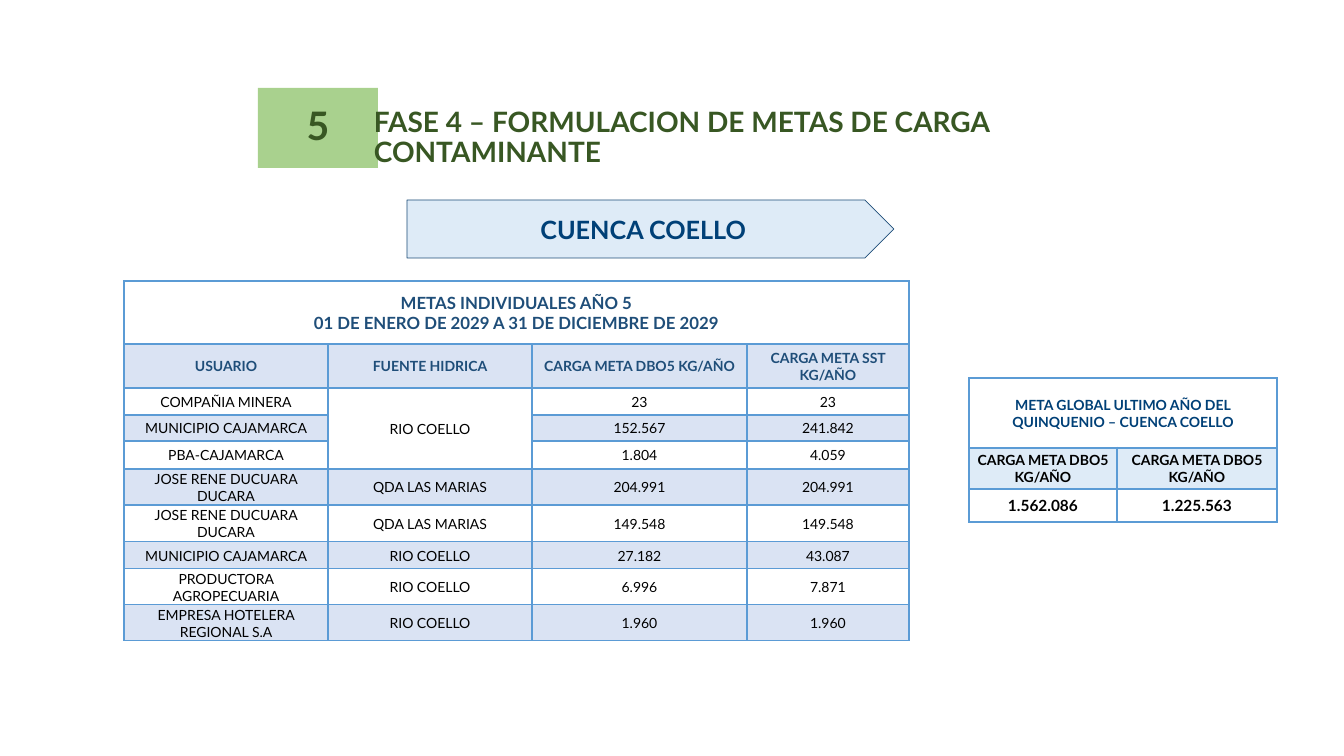
from lxml import etree
from pptx import Presentation
from pptx.dml.color import RGBColor
from pptx.enum.shapes import MSO_SHAPE
from pptx.enum.text import MSO_ANCHOR, MSO_AUTO_SIZE, PP_ALIGN
from pptx.oxml.ns import qn
from pptx.util import Emu, Pt

PENTAGON = MSO_SHAPE.PENTAGON
MIDDLE = MSO_ANCHOR.MIDDLE
NO_AUTOFIT = MSO_AUTO_SIZE.NONE
LEFT, CENTER = PP_ALIGN.LEFT, PP_ALIGN.CENTER

EMU_PER_PX = 914400 / 100.8
FONT = "Lato"
COLORS = {
    "badge": "A9D18E",
    "title": "385723",
    "navy": "004077",
    "heading": "1F4E79",
    "black": "000000",
    "border": "5B9BD5",
    "band": "DAE3F3",
    "pale": "DEEBF7",
}

USER_COLUMNS = ["USUARIO", "FUENTE HIDRICA", "CARGA META DBO5 KG/AÑO", "CARGA META SST KG/AÑO"]
USERS = [
    ["COMPAÑIA MINERA", "RIO COELLO", "23", "23"],
    ["MUNICIPIO CAJAMARCA", "", "152.567", "241.842"],
    ["PBA-CAJAMARCA", "", "1.804", "4.059"],
    ["JOSE RENE DUCUARA DUCARA", "QDA LAS MARIAS", "204.991", "204.991"],
    ["JOSE RENE DUCUARA DUCARA", "QDA LAS MARIAS", "149.548", "149.548"],
    ["MUNICIPIO CAJAMARCA", "RIO COELLO", "27.182", "43.087"],
    ["PRODUCTORA AGROPECUARIA", "RIO COELLO", "6.996", "7.871"],
    ["EMPRESA HOTELERA REGIONAL S.A", "RIO COELLO", "1.960", "1.960"],
]


def px(length):
    return Emu(round(length * EMU_PER_PX))


def rgb(name):
    return RGBColor.from_string(COLORS[name])


def write(frame, lines, size, color, bold=True, align=CENTER, spacing=None):
    """Fill a text frame with one paragraph, its lines parted by line breaks."""
    frame.word_wrap = True
    frame.vertical_anchor = MIDDLE
    para = frame.paragraphs[0]
    para.alignment = align
    para.line_spacing = spacing
    for number, line in enumerate(lines):
        if number:
            para.add_line_break()
        span = para.add_run()
        span.text = line
        span.font.name = FONT
        span.font.size = Pt(size)
        span.font.bold = bold
        span.font.color.rgb = rgb(color)


def add_number_title(page, text, left, top, width, height):
    title = page.shapes.title
    title.left, title.top, title.width, title.height = map(px, (left, top, width, height))
    title.fill.solid()
    title.fill.fore_color.rgb = rgb("badge")
    frame = title.text_frame
    frame.auto_size = NO_AUTOFIT
    frame.margin_left = frame.margin_right = frame.margin_top = frame.margin_bottom = px(10)
    write(frame, [text], 28, "title", spacing=0.9)


def add_heading(page, text, left, top, width, height):
    box = page.shapes.add_textbox(*map(px, (left, top, width, height)))
    write(box.text_frame, [text], 20, "title", align=LEFT, spacing=0.9)


def add_banner(page, text, left, top, width, height):
    banner = page.shapes.add_shape(PENTAGON, *map(px, (left, top, width, height)))
    banner.shadow.inherit = False
    banner.fill.solid()
    banner.fill.fore_color.rgb = rgb("pale")
    banner.line.color.rgb = rgb("heading")
    banner.line.width = Pt(0.5)
    write(banner.text_frame, [text], 18, "navy")


def add_borders(cell, top=1, bottom=1):
    properties = cell._tc.get_or_add_tcPr()
    for side, width in (("L", 1), ("R", 1), ("T", top), ("B", bottom)):
        line = etree.SubElement(properties, qn(f"a:ln{side}"), w=str(Pt(width)))
        fill = etree.SubElement(line, qn("a:solidFill"))
        etree.SubElement(fill, qn("a:srgbClr"), val=COLORS["border"])


def add_grid(page, left, top, widths, heights, head_rule=1):
    """Add a bordered, unfilled table whose first row is one merged heading."""
    place = map(px, (left, top, sum(widths), sum(heights)))
    table = page.shapes.add_table(len(heights), len(widths), *place).table
    table.first_row = table.horz_banding = False
    for column, width in zip(table.columns, widths):
        column.width = px(width)
    for number, (row, height) in enumerate(zip(table.rows, heights)):
        row.height = px(height)
        for cell in row.cells:
            add_borders(cell, head_rule if number == 1 else 1, head_rule if number == 0 else 1)
            cell.fill.background()
            cell.margin_left = cell.margin_right = cell.margin_top = px(1)
            cell.margin_bottom = 0
    table.cell(0, 0).merge(table.cell(0, len(widths) - 1))
    return table


def fill_row(table, number, texts, size, color, bold=True, band=None):
    for column, text in enumerate(texts):
        cell = table.cell(number, column)
        if band:
            cell.fill.solid()
            cell.fill.fore_color.rgb = rgb(band)
        if text:
            write_cell(cell, [text], size, color, bold)


def write_cell(cell, lines, size, color, bold=True):
    write(cell.text_frame, lines, size, color, bold)
    cell.vertical_anchor = MIDDLE


def add_global_goal(page):
    table = add_grid(page, 969, 378, [148, 160], [70, 41, 33], head_rule=2)
    heading = ["META GLOBAL ULTIMO AÑO DEL", "QUINQUENIO – CUENCA COELLO"]
    write_cell(table.cell(0, 0), heading, 10, "navy")
    fill_row(table, 1, ["CARGA META DBO5 KG/AÑO"] * 2, 10, "black", band="pale")
    fill_row(table, 2, ["1.562.086", "1.225.563"], 11, "black")


def add_user_goals(page):
    heights = [63, 44, 27, 26, 28, 36, 37, 27, 36, 36]
    table = add_grid(page, 124, 281, [204, 204, 215, 162], heights)
    heading = ["METAS INDIVIDUALES AÑO 5", "01 DE ENERO DE 2029 A 31 DE DICIEMBRE DE 2029"]
    write_cell(table.cell(0, 0), heading, 12, "heading")
    fill_row(table, 1, USER_COLUMNS, 10, "heading", band="band")
    # The first three users share one water source
    table.cell(2, 1).merge(table.cell(4, 1))
    for number, user in enumerate(USERS, start=2):
        band = "band" if number % 2 else None
        fill_row(table, number, user, 10, "black", bold=False, band=band)


def main():
    deck = Presentation()
    deck.slide_width, deck.slide_height = px(1344), px(756)
    page = deck.slides.add_slide(deck.slide_layouts[5])

    # Heading
    add_number_title(page, "5", 258, 88, 120, 80)
    add_heading(page, "FASE 4 – FORMULACION DE METAS DE CARGA CONTAMINANTE", 364, 101, 859, 75)
    add_banner(page, "CUENCA COELLO", 407, 200, 487, 58)

    # Tables
    add_global_goal(page)
    add_user_goals(page)

    deck.save("out.pptx")


if __name__ == "__main__":
    main()
